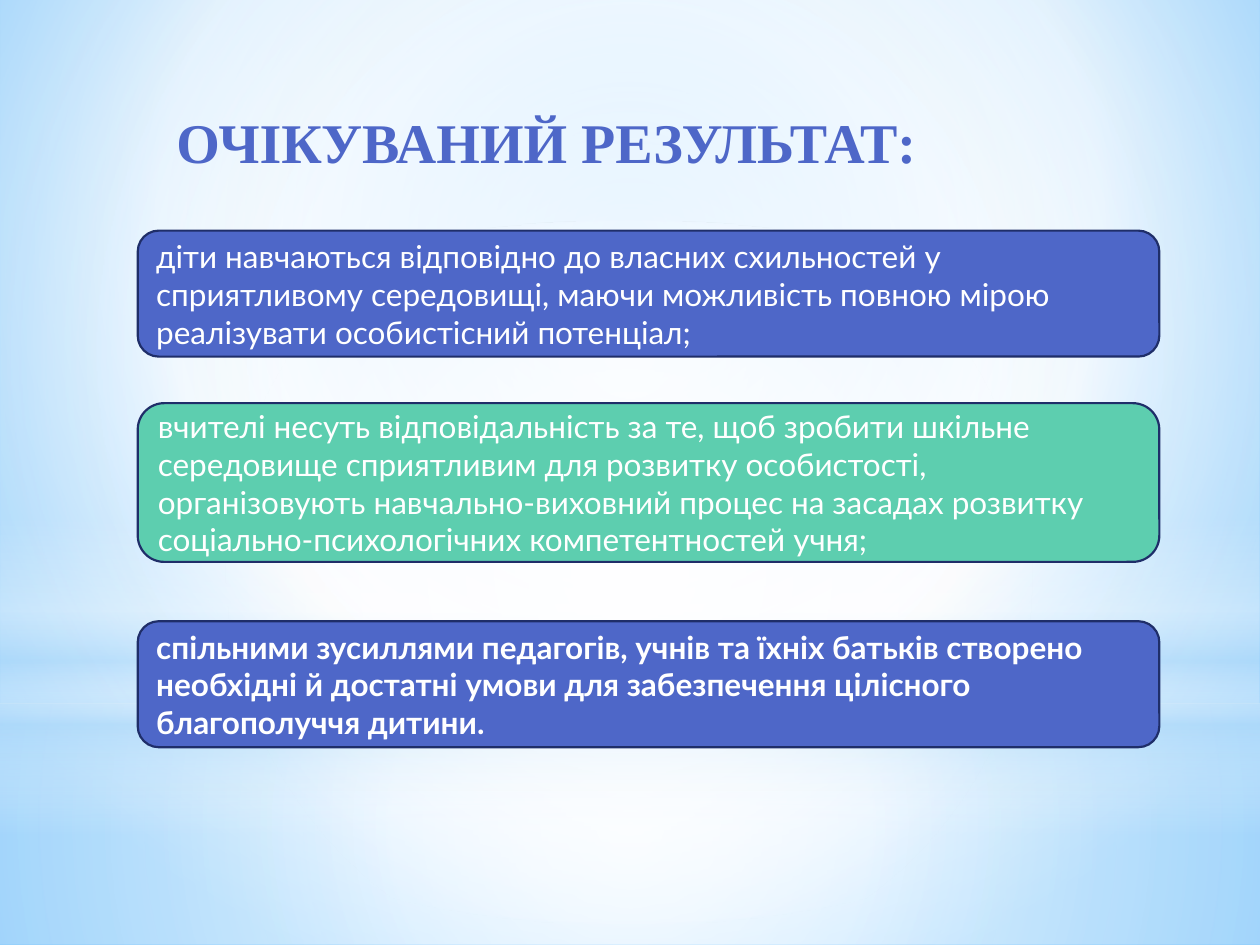
from dataclasses import dataclass
from typing import Optional

import pptx
import pptx.dml.color
import pptx.enum.shapes
import pptx.enum.text
import pptx.oxml
import pptx.oxml.ns
import pptx.util

Pt = pptx.util.Pt
RGB = pptx.dml.color.RGBColor.from_string
PRESET = pptx.enum.shapes.MSO_SHAPE
ANCHOR = pptx.enum.text.MSO_ANCHOR
LEFT_ALIGNED = pptx.enum.text.PP_ALIGN.LEFT
qn = pptx.oxml.ns.qn


@dataclass(frozen=True)
class Theme:
    indigo: str = "4E67C8"
    mint: str = "5DCEAF"
    navy: str = "1F2E69"
    white: str = "FFFFFF"
    mist: str = "B4DCFA"
    sky: str = "9ED5FF"
    azure: str = "5BB9FF"
    heading_font: str = "Times New Roman"
    body_font: str = "Lato"
    heading_size: float = 32
    body_size: float = 18
    outline: float = 1.25


@dataclass(frozen=True)
class Stop:
    position: int
    color: str
    opacity: int = 100


@dataclass(frozen=True)
class Gradient:
    stops: tuple[Stop, ...]
    focus: tuple[int, int, int, int] = (50, 50, 50, 50)
    angle: Optional[int] = None


@dataclass(frozen=True)
class Glow:
    top: float
    height: float
    gradient: Gradient
    preset: PRESET = PRESET.RECTANGLE


@dataclass(frozen=True)
class Outcome:
    top: float
    height: float
    color: str
    text: str
    bold: bool = False


THEME = Theme()
WIDTH, HEIGHT = 720, 540
HORIZON = 401.8
OUTCOME_LEFT, OUTCOME_WIDTH = 78.7, 583.8

BACKDROP = Gradient(
    (Stop(0, THEME.sky), Stop(60, THEME.white), Stop(100, THEME.azure)),
    focus=(20, 10, 20, 60),
)

GLOWS = [
    Glow(HORIZON, HEIGHT - HORIZON, Gradient((
        Stop(0, THEME.white, 91), Stop(37, THEME.white, 76), Stop(100, THEME.mist, 79)))),
    Glow(0, HORIZON, Gradient((
        Stop(0, THEME.white, 89), Stop(48, THEME.white, 62), Stop(100, THEME.mist, 79)))),
    Glow(296.6, 180, Gradient((
        Stop(0, THEME.white, 0), Stop(29, THEME.white, 30), Stop(45, THEME.mist, 40),
        Stop(55, THEME.white, 26), Stop(65, THEME.mist, 60), Stop(100, THEME.white, 0)),
        angle=90)),
    Glow(126, HORIZON, Gradient((Stop(0, THEME.white), Stop(56, THEME.white, 0))),
         PRESET.OVAL),
]

OUTCOMES = [
    Outcome(131.8, 72, THEME.indigo,
            "діти навчаються відповідно до власних схильностей у сприятливому середовищі, "
            "маючи можливість повною мірою реалізувати особистісний потенціал;"),
    Outcome(230.4, 90.7, THEME.mint,
            "вчителі несуть відповідальність за те, щоб зробити шкільне середовище "
            "сприятливим для розвитку особистості, організовують навчально-виховний процес "
            "на засадах розвитку соціально-психологічних компетентностей учня;"),
    Outcome(355, 72, THEME.indigo,
            "спільними зусиллями педагогів, учнів та їхніх батьків створено необхідні й "
            "достатні умови для забезпечення цілісного благополуччя дитини.", bold=True),
]


def apply_format(target, values: dict) -> None:
    for attribute, value in values.items():
        setattr(target, attribute, value)


def write_text(frame, text: str, font: dict, paragraph_format: dict) -> None:
    frame.text = text
    paragraph = frame.paragraphs[0]
    apply_format(paragraph, {"alignment": LEFT_ALIGNED, **paragraph_format})
    run_font = paragraph.runs[0].font
    run_font.color.rgb = RGB(font["color"])
    apply_format(run_font, {key: value for key, value in font.items() if key != "color"})


def set_gradient(fill, element, gradient: Gradient) -> None:
    fill.solid()
    fill.fore_color.rgb = RGB(THEME.white)
    stops = "".join(
        f'<a:gs pos="{stop.position * 1000}"><a:srgbClr val="{stop.color}">'
        f'<a:alpha val="{stop.opacity * 1000}"/></a:srgbClr></a:gs>'
        for stop in gradient.stops)
    if gradient.angle is None:
        sides = " ".join(f'{side}="{share * 1000}"'
                         for side, share in zip("ltrb", gradient.focus))
        shade = f'<a:path path="circle"><a:fillToRect {sides}/></a:path>'
    else:
        shade = f'<a:lin ang="{gradient.angle * 60000}" scaled="0"/>'
    solid = next(element.iter(qn("a:solidFill")))
    solid.getparent().replace(solid, pptx.oxml.parse_xml(
        f'<a:gradFill {pptx.oxml.ns.nsdecls("a")} rotWithShape="1">'
        f'<a:gsLst>{stops}</a:gsLst>{shade}</a:gradFill>'))


def draw_glow(slide, glow: Glow) -> None:
    light = slide.shapes.add_shape(glow.preset, 0, Pt(glow.top), Pt(WIDTH), Pt(glow.height))
    light.shadow.inherit = False
    light.line.fill.background()
    set_gradient(light.fill, light._element, glow.gradient)


def draw_heading(slide, text: str) -> None:
    heading = slide.shapes.title
    apply_format(heading, {"left": Pt(90), "top": Pt(57.6),
                           "width": Pt(504), "height": Pt(273.6)})
    apply_format(heading.text_frame, {"vertical_anchor": ANCHOR.TOP, "word_wrap": True,
                                      "auto_size": pptx.enum.text.MSO_AUTO_SIZE.NONE})
    write_text(heading.text_frame, text,
               {"name": THEME.heading_font, "size": Pt(THEME.heading_size),
                "bold": True, "color": THEME.indigo},
               {"space_before": Pt(6.4), "space_after": Pt(3)})
    properties = heading.text_frame.paragraphs[0]._p.get_or_add_pPr()
    properties.set("marL", str(int(Pt(3.6))))
    properties.set("indent", "0")
    slide.shapes._spTree.append(heading._element)


def draw_outcome(slide, outcome: Outcome) -> None:
    card = slide.shapes.add_shape(PRESET.ROUNDED_RECTANGLE, Pt(OUTCOME_LEFT), Pt(outcome.top),
                                  Pt(OUTCOME_WIDTH), Pt(outcome.height))
    card.shadow.inherit = False
    card.fill.solid()
    card.fill.fore_color.rgb = RGB(outcome.color)
    card.line.color.rgb = RGB(THEME.navy)
    card.line.width = Pt(THEME.outline)
    apply_format(card.text_frame, {"vertical_anchor": ANCHOR.MIDDLE, "word_wrap": True})
    write_text(card.text_frame, outcome.text,
               {"name": THEME.body_font, "size": Pt(THEME.body_size),
                "bold": outcome.bold, "color": THEME.white}, {})


def main() -> None:
    deck = pptx.Presentation()
    apply_format(deck, {"slide_width": Pt(WIDTH), "slide_height": Pt(HEIGHT)})
    slide = deck.slides.add_slide(deck.slide_layouts.get_by_name("Title Only"))
    set_gradient(slide.background.fill, slide._element, BACKDROP)
    for glow in GLOWS:
        draw_glow(slide, glow)
    draw_heading(slide, "ОЧІКУВАНИЙ РЕЗУЛЬТАТ:")
    for outcome in OUTCOMES:
        draw_outcome(slide, outcome)
    deck.save("out.pptx")


if __name__ == "__main__":
    main()
